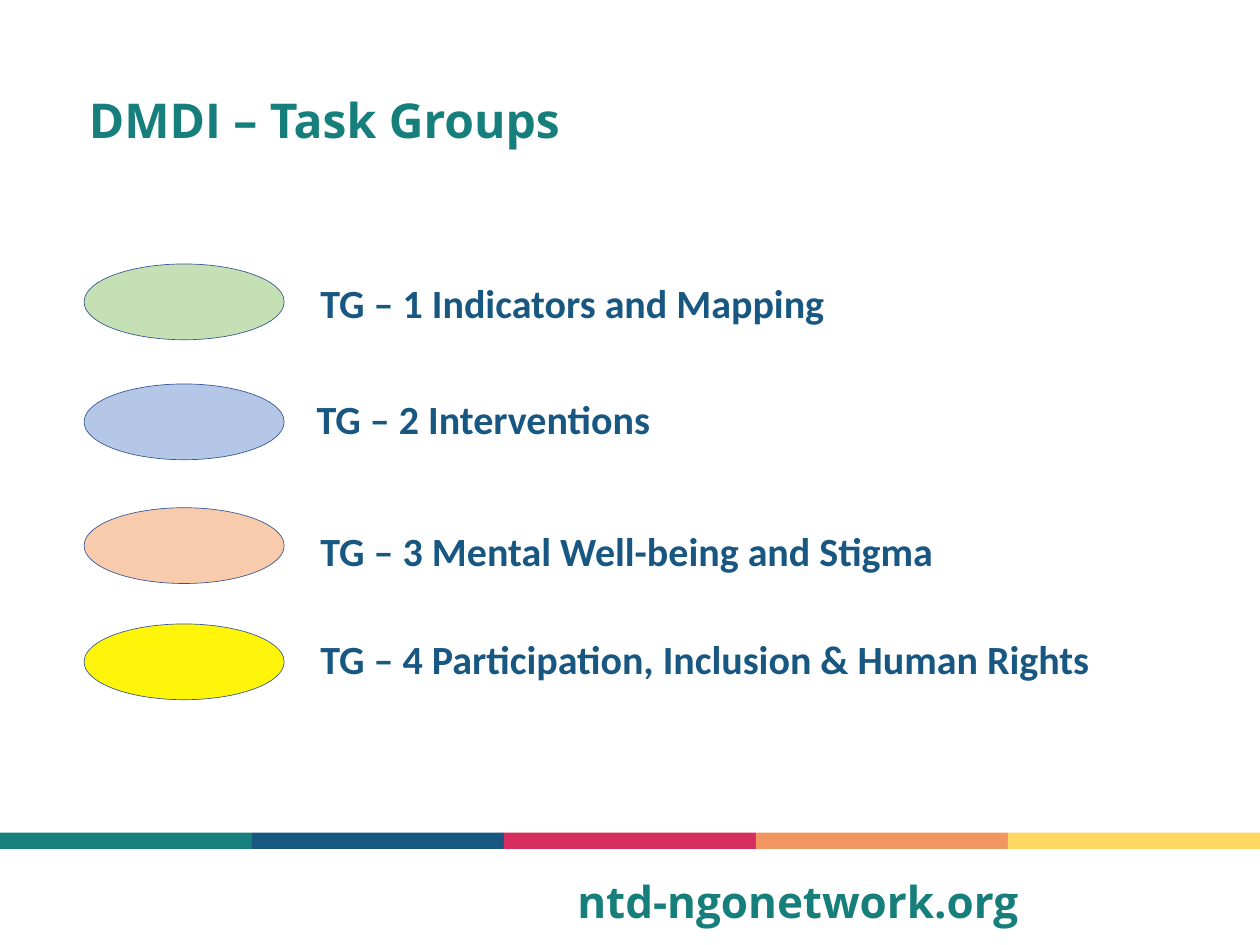
from pptx import Presentation
from pptx.dml.color import RGBColor
from pptx.enum.shapes import MSO_SHAPE
from pptx.enum.text import MSO_ANCHOR
from pptx.util import Cm, Pt

RECT, OVAL = MSO_SHAPE.RECTANGLE, MSO_SHAPE.OVAL
TOP, MIDDLE = MSO_ANCHOR.TOP, MSO_ANCHOR.MIDDLE
WIDTH, HEIGHT = 66.68, 50.01
TEAL, NAVY = "177F7B", "175781"


def color(value):
    return RGBColor.from_string(value)


def add_text(text, x, y, w, h, size=60, font="Calibri", fill=NAVY,
             anchor=TOP, spacing=1.0, inset_top=0.13):
    tf = s.shapes.add_textbox(Cm(x), Cm(y), Cm(w), Cm(h)).text_frame
    tf.word_wrap = True
    tf.vertical_anchor = anchor
    tf.margin_top = Cm(inset_top)
    p = tf.paragraphs[0]
    p.line_spacing = spacing
    r = p.add_run()
    r.text = text
    r.font.name, r.font.size, r.font.bold = font, Pt(size), True
    r.font.color.rgb = color(fill)


prs = Presentation()
prs.slide_width, prs.slide_height = Cm(WIDTH), Cm(HEIGHT)
s = prs.slides.add_slide(prs.slide_layouts[6])

# Footer: colour stripe and web address
stripe = ["17807C", NAVY, "D62F5F", "F29661", "FFD863"]
band_w = WIDTH / len(stripe)
for i, fill in enumerate(stripe):
    sp = s.shapes.add_shape(RECT, Cm(i * band_w), Cm(44.07), Cm(band_w), Cm(0.86))
    sp.shadow.inherit = False
    sp.fill.solid()
    sp.fill.fore_color.rgb = color(fill)
    sp.line.fill.background()
add_text("ntd-ngonetwork.org", 30.3, 45.34, 28.7, 5.03, size=66,
         font="Open Sans", fill=TEAL, anchor=MIDDLE, spacing=0.9)

# Title
add_text("DMDI – Task Groups", 4.45, 5.11, 57.76, 4.47, size=72,
         font="Open Sans", fill=TEAL, spacing=0.9, inset_top=0)

# Task groups: oval fill and top, label and its left, top, width
groups = [
    ("C5E0B4", 13.97, "TG – 1 Indicators and Mapping", 16.71, 14.61, 40.44),
    ("B4C7E7", 20.32, "TG – 2 Interventions", 16.51, 20.75, 40.44),
    ("F8CBAD", 26.87, "TG – 3 Mental Well-being and Stigma", 16.71, 27.74, 40.44),
    ("FFF50A", 33.02, "TG – 4 Participation, Inclusion & Human Rights", 16.71, 33.45, 46.15),
]
for fill, oval_y, label, x, y, w in groups:
    sp = s.shapes.add_shape(OVAL, Cm(4.45), Cm(oval_y), Cm(10.59), Cm(4.01))
    sp.shadow.inherit = False
    sp.fill.solid()
    sp.fill.fore_color.rgb = color(fill)
    sp.line.color.rgb = color("325491")
    sp.line.width = Pt(1)
    add_text(label, x, y, w, 2.82)

prs.save("out.pptx")
